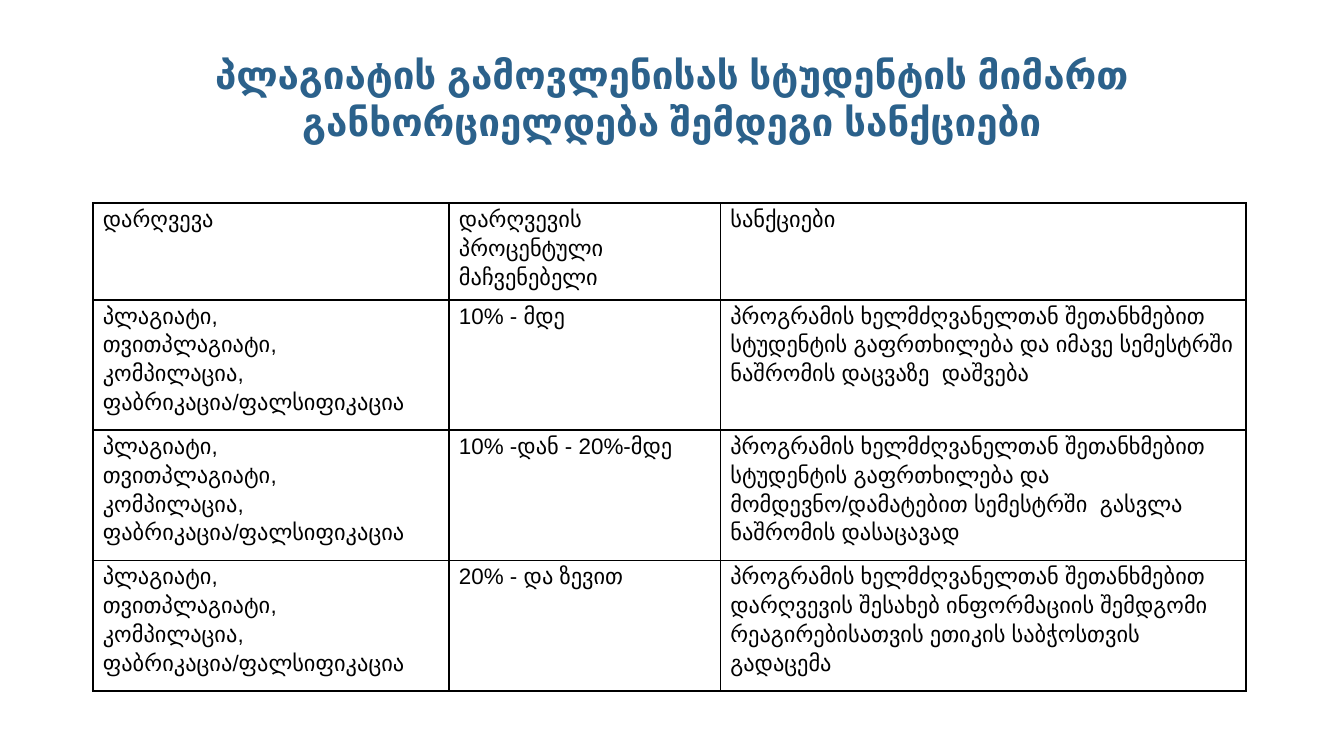
from typing import NamedTuple

from lxml.etree import SubElement
from pptx import Presentation
from pptx.dml.color import RGBColor
from pptx.enum.text import MSO_ANCHOR, PP_ALIGN
from pptx.oxml.ns import qn
from pptx.util import Pt

BLACK = "000000"
COLUMN_WIDTHS = (190.8, 145.4, 281.5)
HEADER_HEIGHT, SANCTION_HEIGHT = 51.8, 69.8
TITLE = "პლაგიატის გამოვლენისას სტუდენტის მიმართ განხორციელდება შემდეგი სანქციები"
VIOLATIONS = ("პლაგიატი,", "თვითპლაგიატი,", "კომპილაცია,", "ფაბრიკაცია/ფალსიფიკაცია")
AGREEMENT = "პროგრამის ხელმძღვანელთან შეთანხმებით "
TITLE_FRAME = {
    "word_wrap": True, "vertical_anchor": MSO_ANCHOR.BOTTOM,
    "margin_left": Pt(7.2), "margin_right": Pt(7.2),
    "margin_top": Pt(7.2), "margin_bottom": Pt(7.2),
}
CELL_MARGINS = {
    "margin_left": Pt(5.4), "margin_right": Pt(5.4),
    "margin_top": Pt(0), "margin_bottom": Pt(0),
}
TITLE_FONT = {"name": "Arial", "size": Pt(20.7), "bold": True}
CELL_FONT = {"name": "Arial", "size": Pt(12), "bold": False}


class TableRow(NamedTuple):
    violations: tuple[str, ...]
    percentage: str
    sanction: str
    height: float = SANCTION_HEIGHT


ROWS = (
    TableRow(("დარღვევა",), "დარღვევის პროცენტული მაჩვენებელი", "სანქციები", HEADER_HEIGHT),
    TableRow(VIOLATIONS, "10% - მდე",
             AGREEMENT + "სტუდენტის გაფრთხილება და იმავე სემესტრში ნაშრომის დაცვაზე  დაშვება"),
    TableRow(VIOLATIONS, "10% -დან - 20%-მდე",
             AGREEMENT + "სტუდენტის გაფრთხილება და მომდევნო/დამატებით სემესტრში  გასვლა "
             "ნაშრომის დასაცავად"),
    TableRow(VIOLATIONS, "20% - და ზევით",
             AGREEMENT + "დარღვევის შესახებ ინფორმაციის შემდგომი რეაგირებისათვის ეთიკის "
             "საბჭოსთვის გადაცემა"),
)


def apply_format(target, values: dict) -> None:
    for name, value in values.items():
        setattr(target, name, value)


def set_color(font, color: str) -> None:
    font.color.rgb = RGBColor.from_string(color)


def write_paragraphs(text_frame, lines: tuple[str, ...], font_format: dict,
                     color: str, paragraph_format: dict) -> None:
    for index, line in enumerate(lines):
        paragraph = text_frame.add_paragraph() if index else text_frame.paragraphs[0]
        apply_format(paragraph, paragraph_format)
        run = paragraph.add_run()
        run.text = line
        apply_format(run.font, font_format)
        set_color(run.font, color)


def add_borders(cell, color: str, width: float) -> None:
    """Draw all four sides; must run before the cell's fill is set."""
    properties = cell._tc.get_or_add_tcPr()
    for side in ("a:lnL", "a:lnR", "a:lnT", "a:lnB"):
        line = SubElement(properties, qn(side), w=str(Pt(width)))
        fill = SubElement(line, qn("a:solidFill"))
        SubElement(fill, qn("a:srgbClr"), val=color)


def add_title(slide) -> None:
    text_frame = slide.shapes.add_textbox(Pt(36), Pt(16.6), Pt(648), Pt(67.7)).text_frame
    apply_format(text_frame, TITLE_FRAME)
    write_paragraphs(text_frame, (TITLE,), TITLE_FONT, "2B618B",
                     {"alignment": PP_ALIGN.CENTER})


def add_sanctions_table(slide) -> None:
    table = slide.shapes.add_table(
        len(ROWS), len(COLUMN_WIDTHS), Pt(49.7), Pt(108.9),
        Pt(sum(COLUMN_WIDTHS)), Pt(sum(row.height for row in ROWS))).table
    apply_format(table, {"first_row": False, "horz_banding": False})
    for column, width in zip(table.columns, COLUMN_WIDTHS):
        column.width = Pt(width)
    for table_row, row in zip(table.rows, ROWS):
        table_row.height = Pt(row.height)
        contents = (row.violations, (row.percentage,), (row.sanction,))
        for cell, lines in zip(table_row.cells, contents):
            apply_format(cell, CELL_MARGINS)
            add_borders(cell, BLACK, 1)
            cell.fill.background()
            write_paragraphs(cell.text_frame, lines, CELL_FONT, BLACK,
                             {"line_spacing": 1.15})


def main() -> None:
    presentation = Presentation()
    apply_format(presentation, {"slide_width": Pt(720), "slide_height": Pt(405)})
    slide = presentation.slides.add_slide(presentation.slide_layouts[6])
    add_title(slide)
    add_sanctions_table(slide)
    presentation.save("out.pptx")


if __name__ == "__main__":
    main()
